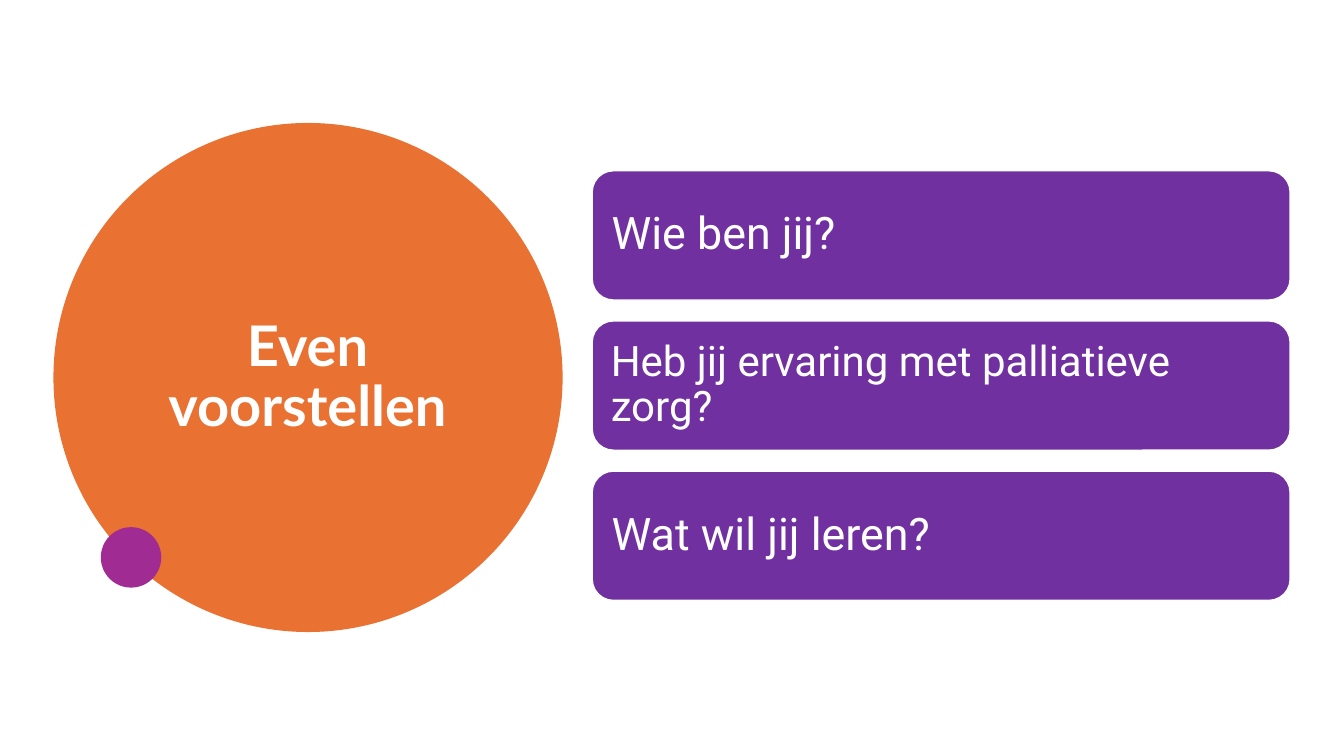
from pptx import Presentation
from pptx import util as u
from pptx.dml.color import RGBColor
from pptx.enum import shapes, text

HUES = {"orange": "E97132", "plum": "A02B93", "purple": "7030A0", "white": "FFFFFF"}


class Deck:
    """Hold the slide and its style, and draw each kind of element."""

    def __init__(self):
        self.prs = Presentation()
        self.prs.slide_width = u.Inches(13.33)
        self.prs.slide_height = u.Inches(7.5)
        self.slide = self.prs.slides.add_slide(self.prs.slide_layouts[5])

    def hue(self, name):
        return RGBColor.from_string(HUES[name])

    def shape(self, kind, left, top, width, height, fill, line=None):
        item = self.slide.shapes.add_shape(kind, *map(u.Inches, (left, top, width, height)))
        item.shadow.inherit = False
        item.fill.solid()
        item.fill.fore_color.rgb = self.hue(fill)
        if line:
            item.line.color.rgb = self.hue(line)
            item.line.width = u.Pt(1.5)
        else:
            item.line.fill.background()
        return item

    def disc(self, left, top, size, fill):
        self.shape(shapes.MSO_SHAPE.OVAL, left, top, size, size, fill)

    def label(self, item, words, font, size, align, bold=False):
        frame = item.text_frame
        frame.word_wrap = True
        frame.auto_size = text.MSO_AUTO_SIZE.NONE
        frame.vertical_anchor = text.MSO_ANCHOR.MIDDLE
        frame.text = words
        para = frame.paragraphs[0]
        para.alignment = align
        para.line_spacing = 0.9
        para.space_before = u.Pt(0)
        para.font.name = font
        para.font.size = u.Pt(size)
        para.font.bold = bold
        para.font.color.rgb = self.hue("white")
        return frame

    def title(self, words, left, top, width, height):
        item = self.slide.shapes.title
        item.left, item.top = u.Inches(left), u.Inches(top)
        item.width, item.height = u.Inches(width), u.Inches(height)
        self.label(item, words, "Lato", 40, text.PP_ALIGN.CENTER, True)
        self.slide.shapes.element.append(item.element)

    def card(self, top, words, size):
        item = self.shape(shapes.MSO_SHAPE.ROUNDED_RECTANGLE, 5.87, top, 6.93, 1.29,
                          "purple", "white")
        frame = self.label(item, words, "Roboto", size, text.PP_ALIGN.LEFT)
        pad = u.Inches(size / 240)
        frame.margin_left = frame.margin_right = pad
        frame.margin_top = frame.margin_bottom = pad


def main():
    deck = Deck()
    deck.disc(0.53, 1.22, 5.05, "orange")
    deck.title("Even voorstellen", 1.28, 1.53, 3.54, 4.45)
    deck.disc(1, 5.23, 0.6, "plum")
    asks = [("Wie ben jij?", 32),
            ("Heb jij ervaring met palliatieve zorg?", 30),
            ("Wat wil jij leren?", 32)]
    for row, (words, size) in enumerate(asks):
        deck.card(1.69 + row * 1.49, words, size)
    deck.prs.save("out.pptx")


if __name__ == "__main__":
    main()
